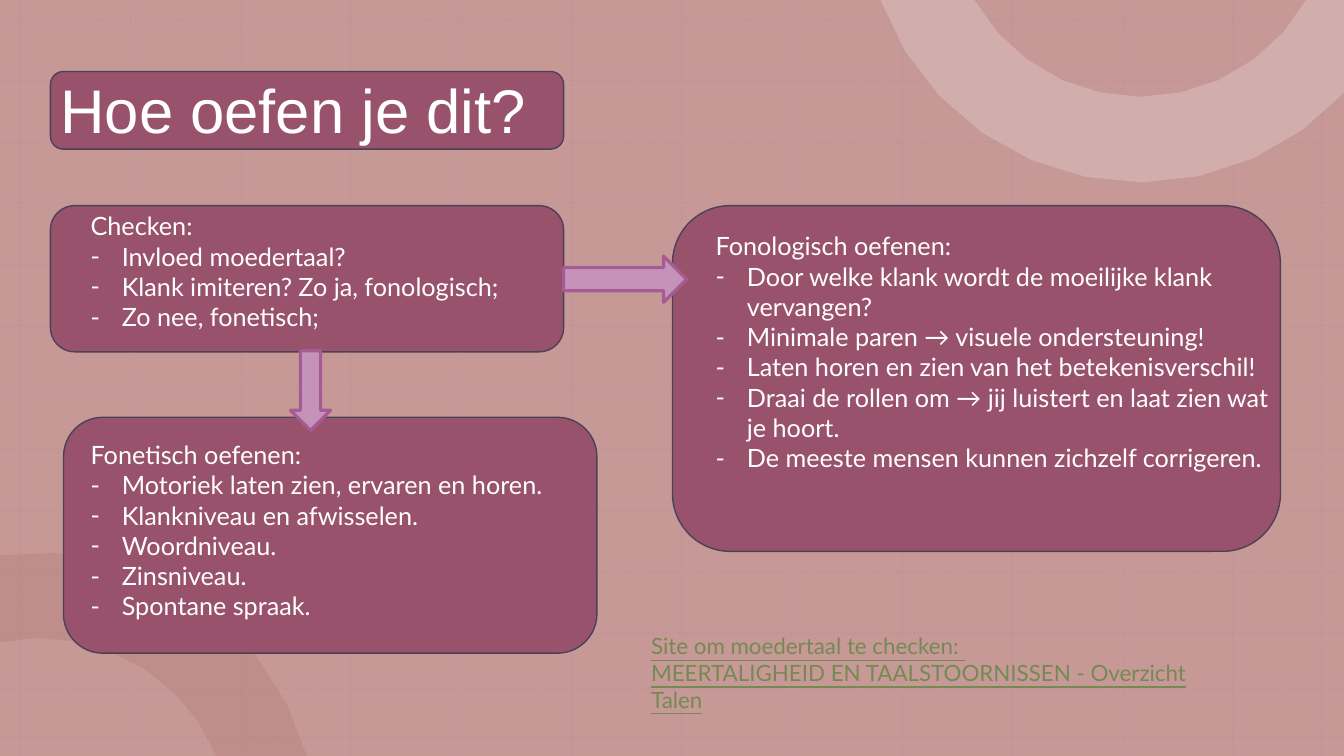
from math import cos, radians, sin

from lxml.etree import SubElement
from pptx import Presentation
from pptx.dml.color import RGBColor
from pptx.enum.dml import MSO_LINE_DASH_STYLE as DASH
from pptx.enum.shapes import MSO_CONNECTOR, MSO_SHAPE as SHAPE
from pptx.enum.text import MSO_ANCHOR as ANCHOR
from pptx.oxml.ns import qn
from pptx.util import Inches, Pt

WIDTH, HEIGHT = 13.33, 7.5
COLOURS = {
    "background": "C69996", "grid": "AF7FBA", "dark_ring": "A7625E", "light_ring": "DDC2C0",
    "panel": "99526B", "panel_edge": "4A4257", "arrow": "C593B9", "arrow_edge": "A75B95",
    "white": "FFFFFF", "link": "758A53",
}
TITLE = {"name": "Arial", "size": Pt(44)}
BODY = {"name": "Lato", "size": Pt(18)}
LINK = {"name": "Lato", "size": Pt(16), "underline": True}

PANELS = [
    (0.5, 0.71, 5.09, 0.77),
    (0.5, 2.04, 5.09, 1.45),
    (6.67, 2.04, 6.03, 3.43),
    (0.63, 4.14, 5.29, 2.34),
]
LISTS = [
    ((0.8, 2.04, 4.45, 1.62), "Checken:", [
        "Invloed moedertaal?",
        "Klank imiteren? Zo ja, fonologisch;",
        "Zo nee, fonetisch;",
    ]),
    ((7, 2.24, 5.73, 3.43), "Fonologisch oefenen:", [
        "Door welke klank wordt de moeilijke klank vervangen?",
        "Minimale paren → visuele ondersteuning!",
        "Laten horen en zien van het betekenisverschil!",
        "Draai de rollen om → jij luistert en laat zien wat je hoort.",
        "De meeste mensen kunnen zichzelf corrigeren.",
    ]),
    ((0.8, 4.31, 5.75, 1.92), "Fonetisch oefenen:", [
        "Motoriek laten zien, ervaren en horen.",
        "Klankniveau en afwisselen.",
        "Woordniveau.",
        "Zinsniveau.",
        "Spontane spraak.",
    ]),
]


def colour(name):
    """Return a named colour as RGB."""
    return RGBColor.from_string(COLOURS[name])


def set_alpha(fill, percent):
    """Make a solid colour partly transparent."""
    tint = next(fill._xPr.iter(qn("a:srgbClr")))
    SubElement(tint, qn("a:alpha")).set("val", str(percent * 1000))


def paint(shape, fill, edge=None, weight=1):
    """Give a shape its fill and outline."""
    shape.shadow.inherit = False
    shape.fill.solid()
    shape.fill.fore_color.rgb = colour(fill)
    if edge:
        shape.line.color.rgb = colour(edge)
        shape.line.width = Pt(weight)
    else:
        shape.line.fill.background()


def add_block(page, kind, place, *look):
    """Draw a painted preset shape."""
    paint(page.shapes.add_shape(kind, *map(Inches, place)), *look)


def add_grid_line(page, *ends):
    """Draw one faint dotted line."""
    line = page.shapes.add_connector(MSO_CONNECTOR.STRAIGHT, *map(Inches, ends))
    line.line.color.rgb = colour("grid")
    line.line.width = Pt(1.5)
    line.line.dash_style = DASH.ROUND_DOT
    set_alpha(line.line.fill, 20)
    SubElement(line._element.spPr, qn("a:effectLst"))


def spread(first, last, count):
    """Return evenly spaced positions."""
    return [first + (last - first) * index / (count - 1) for index in range(count)]


def add_grid(page):
    """Cover the page with the dotted grid."""
    for x in spread(0.2, 12.23, 12) + [13.11]:
        add_grid_line(page, x, 0, x, HEIGHT)
    for y in spread(0.19, 6.28, 11) + [6.83, 7.31]:
        add_grid_line(page, 0, y, WIDTH, y)


def arc(centre, radius, start, end, count):
    """Return points along a circular arc, in degrees."""
    angles = map(radians, spread(start, end, count))
    return [(centre[0] + radius * cos(a), centre[1] + radius * sin(a)) for a in angles]


def add_ring(page, centre, outer, inner, corners, fill, opacity, count):
    """Draw the part of a ring that lies on the page."""
    points = arc(centre, 2.74, *outer, count) + corners + arc(centre, 1.89, *inner, count)
    builder = page.shapes.build_freeform(*map(Inches, points[0]), scale=1.0)
    builder.add_line_segments([(Inches(x), Inches(y)) for x, y in points[1:]])
    ring = builder.convert_to_shape()
    paint(ring, fill)
    set_alpha(ring.fill, opacity)


def add_text(page, place, lines, style, ink, anchor=ANCHOR.TOP):
    """Write paragraphs in a text box and return them."""
    frame = page.shapes.add_textbox(*map(Inches, place)).text_frame
    frame.word_wrap = True
    frame.vertical_anchor = anchor
    frame.text = "\n".join(lines)
    for para in frame.paragraphs:
        for span in para.runs:
            span.font.color.rgb = colour(ink)
            for key, value in style.items():
                setattr(span.font, key, value)
    return frame.paragraphs


def add_list(page, place, heading, items):
    """Write a heading with dashed items below it."""
    for para in add_text(page, place, [heading] + items, BODY, "white")[1:]:
        properties = para._p.get_or_add_pPr()
        properties.set("marL", str(Inches(0.31)))
        properties.set("indent", str(-Inches(0.31)))
        SubElement(properties, qn("a:buFont")).set("typeface", "Lato")
        SubElement(properties, qn("a:buChar")).set("char", "-")


def main():
    """Build the slide and save it."""
    deck = Presentation()
    deck.slide_width, deck.slide_height = Inches(WIDTH), Inches(HEIGHT)
    page = deck.slides.add_slide(deck.slide_layouts[6])

    add_block(page, SHAPE.RECTANGLE, (0, 0, WIDTH, HEIGHT), "background")
    add_grid(page)
    add_ring(page, (0.4, 8.22), (261.6, 344.76), (337.61, 257.8), [], "dark_ring", 20, 8)
    add_ring(page, (11.31, -0.93), (160.16, 42.5), (29.48, 150.52),
             [(WIDTH, 0)], "light_ring", 50, 11)

    for place in PANELS:
        add_block(page, SHAPE.ROUNDED_RECTANGLE, place, "panel", "panel_edge")
    title = add_text(page, (0.5, 0.4, 11.73, 1.45), ["Hoe oefen je dit?"],
                     TITLE, "white", ANCHOR.MIDDLE)
    title[0].line_spacing = 0.9
    for place, heading, items in LISTS:
        add_list(page, place, heading, items)

    arrow_look = ("arrow", "arrow_edge", 2.25)
    add_block(page, SHAPE.DOWN_ARROW, (2.88, 3.48, 0.4, 0.79), *arrow_look)
    add_block(page, SHAPE.RIGHT_ARROW, (5.59, 2.54, 1.22, 0.46), *arrow_look)
    add_text(page, (6.36, 6.22, 6.03, 0.94), [
        "Site om moedertaal te checken: ",
        "MEERTALIGHEID EN TAALSTOORNISSEN - Overzicht Talen",
    ], LINK, "link")
    deck.save("out.pptx")


if __name__ == "__main__":
    main()
